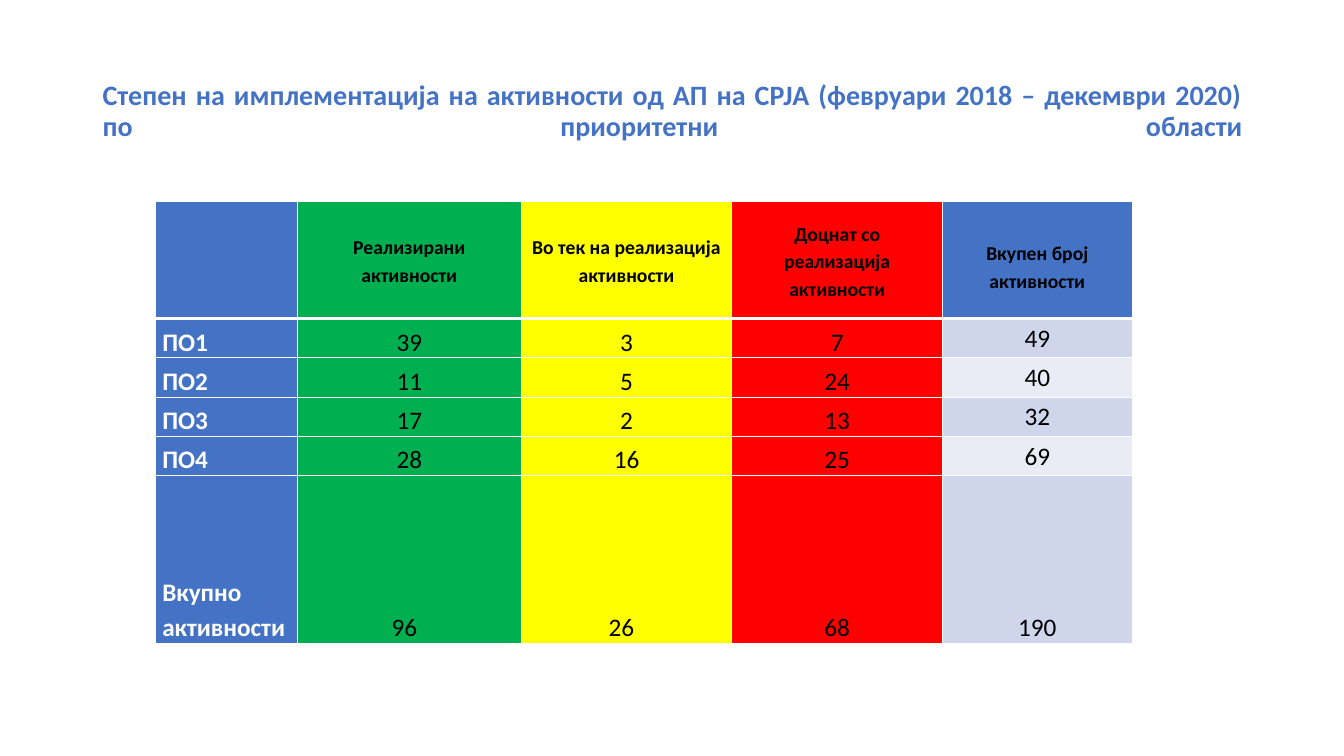
import dataclasses

import pptx
import pptx.dml.color
import pptx.enum.text
import pptx.oxml
import pptx.oxml.ns
import pptx.util

ALIGN = pptx.enum.text.PP_ALIGN
ANCHOR = pptx.enum.text.MSO_ANCHOR


@dataclasses.dataclass(frozen=True)
class Theme:
    font: str = "Calibri"
    blue: str = "4472C4"
    green: str = "00B050"
    yellow: str = "FFFF00"
    red: str = "FF0000"
    band_dark: str = "CFD5EA"
    band_light: str = "E9EBF5"
    white: str = "FFFFFF"
    black: str = "000000"
    title_size: int = 20
    header_size: int = 14
    body_size: int = 18
    thin_line: int = 1
    thick_line: int = 3


class ReportSlide:
    def __init__(self, deck, theme):
        self.deck = deck
        self.theme = theme
        self.slide = deck.slides.add_slide(deck.slide_layouts[6])

    def across(self, percent):
        return round(self.deck.slide_width * percent / 100)

    def down(self, percent):
        return round(self.deck.slide_height * percent / 100)

    def set_text(self, frame, text, size, color, bold, align, spacing, after=0):
        frame.text = text
        paragraph = frame.paragraphs[0]
        paragraph.alignment = align
        paragraph.line_spacing = spacing
        paragraph.space_after = pptx.util.Pt(after)
        for run in paragraph.runs:
            run.font.name = self.theme.font
            run.font.size = pptx.util.Pt(size)
            run.font.bold = bold
            run.font.color.rgb = pptx.dml.color.RGBColor.from_string(color)

    def title(self, text, left, top, width, height):
        heading = self.slide.shapes.add_textbox(
            self.across(left), self.down(top), self.across(width), self.down(height))
        frame = heading.text_frame
        frame.word_wrap = True
        frame.vertical_anchor = ANCHOR.MIDDLE
        frame.margin_top = pptx.util.Inches(0.32)
        self.set_text(frame, text, self.theme.title_size, self.theme.blue, True,
                      ALIGN.JUSTIFY, 0.9)

    def table(self, left, top, column_shares, row_shares):
        grid = self.slide.shapes.add_table(
            len(row_shares), len(column_shares), self.across(left), self.down(top),
            self.across(sum(column_shares)), self.down(sum(row_shares))).table
        for column, share in zip(grid.columns, column_shares):
            column.width = self.across(share)
        for row, share in zip(grid.rows, row_shares):
            row.height = self.down(share)
        return grid

    def cell(self, cell, text, fill, size, color, bold, align, anchor,
             extra_top=0, extra_right=0):
        cell.margin_left = pptx.util.Inches(0.07)
        cell.margin_right = pptx.util.Inches(0.07 + extra_right)
        cell.margin_top = pptx.util.Inches(extra_top)
        cell.margin_bottom = 0
        cell.vertical_anchor = anchor
        cell.fill.solid()
        cell.fill.fore_color.rgb = pptx.dml.color.RGBColor.from_string(fill)
        self.set_text(cell.text_frame, text, size, color, bold, align, 1.15, 6)

    def borders(self, cell, top, bottom):
        thin = self.theme.thin_line
        properties = cell._tc.get_or_add_tcPr()
        edges = {"lnL": thin, "lnR": thin, "lnT": top, "lnB": bottom}
        for position, (edge, width) in enumerate(edges.items()):
            properties.insert(position, pptx.oxml.parse_xml(
                f'<a:{edge} {pptx.oxml.ns.nsdecls("a")} w="{pptx.util.Pt(width)}">'
                f'<a:solidFill><a:srgbClr val="{self.theme.white}"/></a:solidFill>'
                f'</a:{edge}>'))


def main():
    theme = Theme()
    deck = pptx.Presentation()
    deck.slide_width = pptx.util.Inches(13.33)
    deck.slide_height = pptx.util.Inches(7.5)
    report = ReportSlide(deck, theme)

    report.title(
        "Степен на имплементација на активности од АП на СРЈА "
        "(февруари 2018 – декември 2020) по приоритетни области\v",
        6.9, 5.33, 86.25, 19.33)

    headers = ["", "Реализирани активности", "Во тек на реализација активности",
               "Доцнат со реализација активности", "Вкупен број активности"]
    priorities = [
        ("ПО1", 39, 3, 7, 49),
        ("ПО2", 11, 5, 24, 40),
        ("ПО3", 17, 2, 13, 32),
        ("ПО4", 28, 16, 25, 69),
        ("Вкупно активности", 96, 26, 68, 190),
    ]
    status_fills = [theme.blue, theme.green, theme.yellow, theme.red]
    bands = [theme.band_dark, theme.band_light]
    total_column = len(headers) - 1
    total_row = len(priorities)

    activities = report.table(
        11.55, 26.67, [10.58, 16.65, 15.68, 15.68, 14.1],
        [15.47] + [5.2] * (total_row - 1) + [22.2])

    for column, (header, fill) in enumerate(zip(headers, status_fills + [theme.blue])):
        heading = activities.cell(0, column)
        report.cell(heading, header, fill, theme.header_size, theme.black, True,
                    ALIGN.CENTER, ANCHOR.MIDDLE,
                    extra_top=0.12 if column == total_column else 0)
        report.borders(heading, theme.thin_line, theme.thick_line)

    for row, values in enumerate(priorities, start=1):
        fills = status_fills + [bands[(row - 1) % 2]]
        for column, (value, fill) in enumerate(zip(values, fills)):
            is_label = column == 0
            is_top = column == total_column and row < total_row
            is_shifted = row == total_row and column in (1, 2)
            entry = activities.cell(row, column)
            report.cell(entry, str(value), fill, theme.body_size,
                        theme.white if is_label else theme.black, is_label,
                        ALIGN.JUSTIFY if is_label else ALIGN.CENTER,
                        ANCHOR.TOP if is_top else ANCHOR.BOTTOM,
                        extra_right=0.1 if is_shifted else 0)
            report.borders(entry, theme.thick_line if row == 1 else theme.thin_line,
                           theme.thin_line)

    deck.save("out.pptx")


if __name__ == "__main__":
    main()
